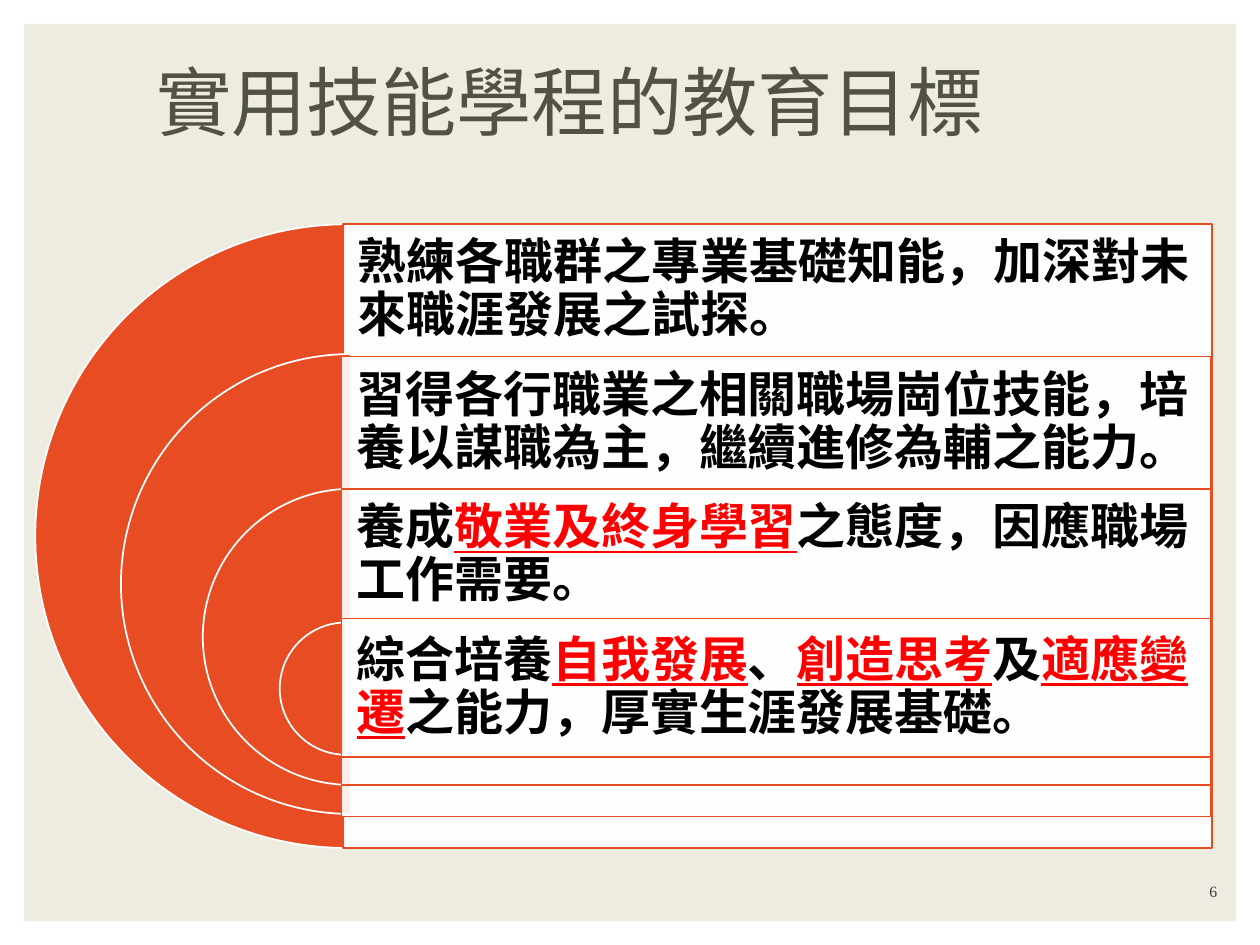
from lxml import etree
from pptx import Presentation
from pptx.dml.color import RGBColor
from pptx.enum import shapes, text
from pptx.oxml import ns
from pptx.util import Inches, Pt

SANS, SERIF = "Noto Sans CJK SC", "Times New Roman"
ORANGE, WHITE, BLACK, RED = "E84C22", "FFFFFF", "000000", "FF0000"

# Each goal: left, top and height of its panel, pie left, top and size,
# and its wording, where every second piece is stressed
GOALS = [
    ((2.72, 1.78, 4.95), (0.28, 1.78, 4.95), 1.05,
     ["熟練各職群之專業基礎知能，加深對未來職涯發展之試探。"]),
    ((2.71, 2.83, 3.65), (0.96, 2.81, 3.65), 1.05,
     ["習得各行職業之相關職場崗位技能，培養以謀職為主，繼續進修為輔之能力。"]),
    ((2.71, 3.88, 2.35), (1.61, 3.88, 2.35), 1.05,
     ["養成", "敬業及終身學習", "之態度，因應職場工作需要。"]),
    ((2.71, 4.91, 1.1), (2.22, 4.94, 1.05), 1.1,
     ["綜合培養", "自我發展", "、", "創造思考", "及", "適應變遷",
      "之能力，厚實生涯發展基礎。"]),
]
WIDE = 6.9


def color(code):
    return RGBColor.from_string(code)


def add_shape(slide, kind, box, fill, line=None, alpha=None):
    shape = slide.shapes.add_shape(kind, *map(Inches, box))
    shape.shadow.inherit = False
    shape.fill.solid()
    shape.fill.fore_color.rgb = color(fill)
    if alpha:
        tint = shape.fill._xPr.find(".//" + ns.qn("a:srgbClr"))
        etree.SubElement(tint, ns.qn("a:alpha"), val=str(alpha * 1000))
    if line:
        shape.line.color.rgb = color(line)
        shape.line.width = Pt(1)
    else:
        shape.line.fill.background()
    return shape


def style(run, size, code, face=SANS, bold=False):
    font = run.font
    font.size, font.bold, font.name = Pt(size), bold, face
    font.color.rgb = color(code)
    latin = run._r.rPr.find(ns.qn("a:latin"))
    latin.addnext(latin.makeelement(ns.qn("a:ea"), {"typeface": face}))


def add_text(slide, box, words, anchor=text.MSO_ANCHOR.MIDDLE):
    frame = slide.shapes.add_textbox(*map(Inches, box)).text_frame
    frame.word_wrap = True
    frame.vertical_anchor = anchor
    frame.text = words
    return frame


def add_glow(run):
    # White shadow down and to the right of the letters
    fill = run._r.rPr.find(ns.qn("a:solidFill"))
    effect = fill.makeelement(ns.qn("a:effectLst"), {})
    shade = etree.SubElement(effect, ns.qn("a:outerShdw"),
                             dist="38100", dir="2700000")
    etree.SubElement(shade, ns.qn("a:srgbClr"), val=WHITE)
    fill.addnext(effect)


def add_goal(slide, panel, pie, band, parts):
    left, top, high = panel
    x, y, size = pie
    arc = add_shape(slide, shapes.MSO_SHAPE.PIE, (x, y, size, size),
                    ORANGE, WHITE)
    # Left half of the circle: 90 to 270 degrees
    arc.adjustments[0], arc.adjustments[1] = 54, 162
    add_shape(slide, shapes.MSO_SHAPE.RECTANGLE, (left, top, WIDE, high),
              WHITE, ORANGE, 90)

    frame = add_text(slide, (left, top, WIDE, band), parts[0])
    frame.margin_left = frame.margin_right = Inches(0.12)
    frame.margin_top = frame.margin_bottom = Inches(0.12)
    para = frame.paragraphs[0]
    para.line_spacing = 0.9
    for part in parts[1:]:
        para.add_run().text = part
    for i, run in enumerate(para.runs):
        stress = i % 2 == 1
        style(run, 28, RED if stress else BLACK, bold=True)
        run.font.underline = stress


def main():
    deck = Presentation()
    deck.slide_width, deck.slide_height = Inches(10), Inches(7.5)
    slide = deck.slides.add_slide(deck.slide_layouts[6])

    # Background panel
    add_shape(slide, shapes.MSO_SHAPE.RECTANGLE, (0.19, 0.19, 9.62, 7.12),
              "EEECE1")

    # Page number
    page = add_text(slide, (8.56, 6.9, 1.2, 0.3), "6",
                    text.MSO_ANCHOR.BOTTOM).paragraphs[0]
    page.alignment = text.PP_ALIGN.RIGHT
    style(page.runs[0], 9, "404040", SERIF)

    # Nested goals, outermost first
    for goal in GOALS:
        add_goal(slide, *goal)

    # Title
    title = add_text(slide, (1.14, 0.29, 8.27, 1.01), "實用技能學程的教育目標")
    run = title.paragraphs[0].runs[0]
    style(run, 43, "525244")
    add_glow(run)

    deck.save("out.pptx")


if __name__ == "__main__":
    main()
